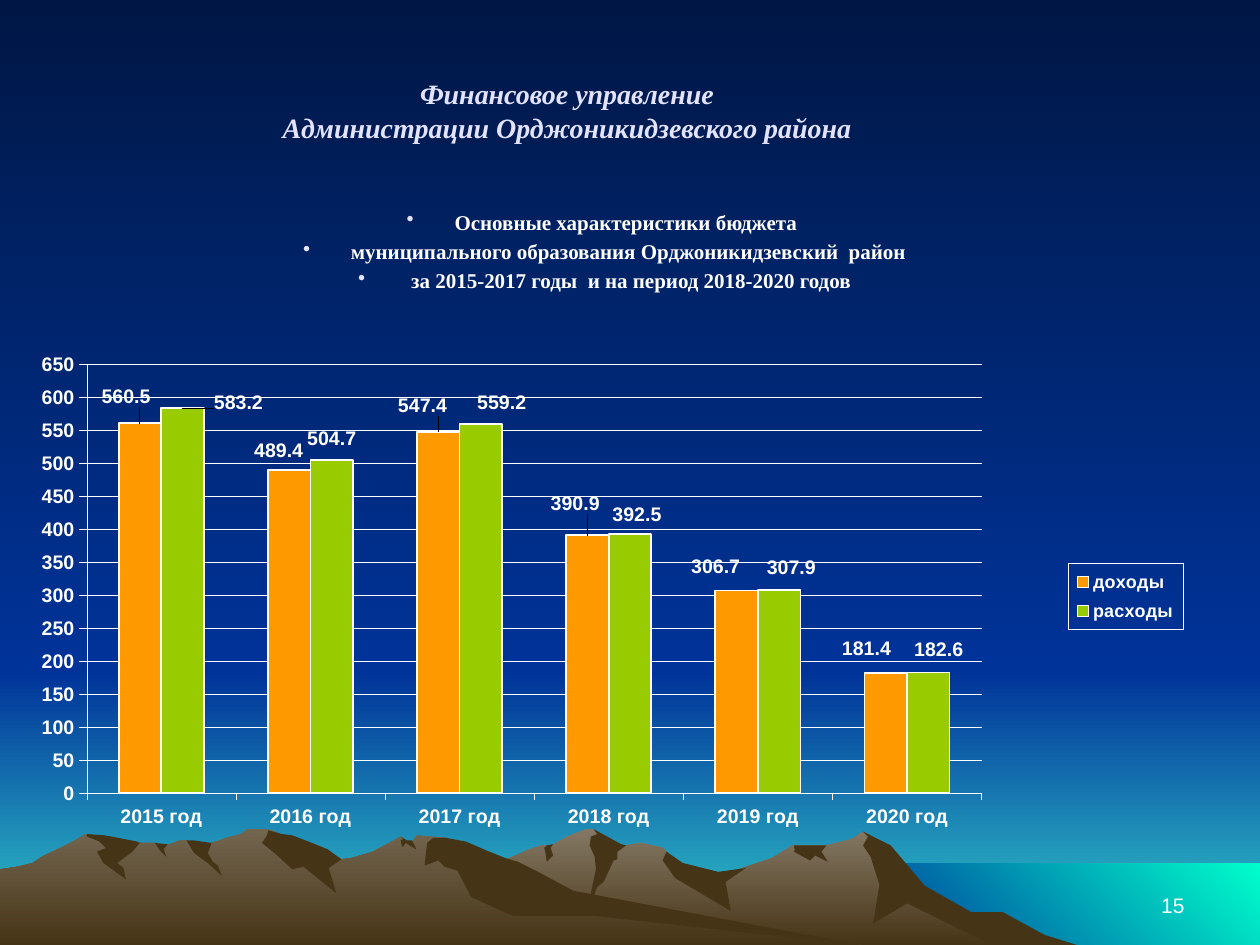
import pptx
import pptx.chart.data
import pptx.dml.color
import pptx.enum.chart
import pptx.enum.text
import pptx.oxml
import pptx.oxml.ns
import pptx.util

CELL = 9144  # the grid has 1000 columns and 750 rows, 100 cells to the inch
COLUMNS, ROWS = 1000, 750
COLORS = {
    "night": "001745", "blue": "003399", "lagoon": "33CCCC", "mint": "00FFCC",
    "mist": "847864", "haze": "73664F", "earth": "463416",
    "white": "FFFFFF", "lilac": "E3E3FF", "income": "FF9900", "expense": "99CC00",
}
DOWN, UP_RIGHT = 270, 45
ALIGN = pptx.enum.text.PP_ALIGN
ANCHOR = pptx.enum.text.MSO_ANCHOR

# Outlines of the mountains, in grid cells
RIGHT_RANGE = [
    (802, 740), (778, 727), (764, 723), (723, 698), (702, 671), (685, 660), (676, 666), (656, 671),
    (629, 671), (613, 681), (566, 697), (536, 690), (529, 676), (526, 673), (509, 669), (486, 673),
    (474, 661), (471, 658), (465, 658), (450, 664), (438, 671), (430, 671), (418, 675), (405, 681),
    (394, 685), (355, 698), (327, 709), (277, 739), (258, 751), (821, 751)]
LEFT_RANGE = [
    (690, 751), (667, 748), (432, 712), (354, 665), (331, 663), (327, 668), (323, 668), (318, 664),
    (296, 676), (279, 681), (271, 682), (260, 676), (236, 681), (223, 663), (219, 660), (212, 658),
    (196, 658), (191, 662), (183, 664), (168, 669), (160, 671), (148, 667), (143, 667), (132, 671),
    (128, 671), (123, 669), (111, 669), (94, 671), (68, 662), (56, 669), (46, 674), (35, 679),
    (26, 685), (14, 688), (0, 690), (0, 751)]
RIGHT_SHADOWS = [
    [(796, 724), (771, 724), (734, 703), (707, 671), (685, 660), (689, 664), (685, 671), (691, 680),
     (698, 702), (693, 733), (720, 717), (792, 752), (858, 751), (829, 742)],
    [(471, 658), (474, 662), (469, 664), (468, 671), (472, 680), (473, 690), (465, 727), (474, 704),
     (479, 700), (487, 683), (490, 682), (490, 676), (497, 671), (493, 670)],
    [(529, 676), (526, 683), (536, 697), (580, 723), (576, 700), (592, 689), (570, 692), (542, 685)],
    [(650, 671), (630, 671), (631, 675), (630, 676), (643, 683), (647, 679), (657, 684), (652, 676),
     (656, 671)],
    [(433, 677), (432, 673), (434, 671), (439, 670), (437, 673), (439, 679), (434, 684)],
]
LEFT_SHADOWS = [
    [(212, 663), (208, 669), (219, 678), (232, 690), (241, 688), (267, 709), (261, 689), (271, 682),
     (260, 674), (245, 668), (232, 663), (224, 662), (213, 659)],
    [(370, 668), (354, 665), (344, 665), (339, 669), (337, 687), (348, 683), (353, 688), (363, 691),
     (374, 712), (407, 727), (472, 727), (690, 751), (683, 750), (455, 707), (427, 692), (411, 684),
     (401, 681), (386, 675)],
    [(318, 667), (320, 666), (318, 664), (323, 667), (327, 667), (330, 673), (330, 674), (322, 669),
     (320, 672), (319, 672)],
    [(154, 667), (161, 668), (168, 669), (165, 677), (169, 684), (173, 687), (176, 695), (165, 685),
     (154, 677), (148, 667)],
    [(133, 670), (130, 674), (132, 680), (127, 675), (123, 669)],
    [(109, 668), (111, 669), (105, 676), (93, 685), (98, 689), (100, 698), (82, 685), (77, 676),
     (84, 673), (79, 668), (69, 664), (69, 662), (83, 663), (94, 665)],
]

# Budget figures, with the shift of each value label in points
YEARS = [f"{year} год" for year in range(2015, 2021)]
SERIES = [
    ("доходы", "income", [560.5, 489.4, 547.4, 390.9, 306.7, 181.4],
     [(-8, -6), (-6, -2), (-9, -6), (-7, -9), (-12, -5), (-11, -5)]),
    ("расходы", "expense", [583.2, 504.7, 559.2, 392.5, 307.9, 182.6],
     [(32, 6), (0, -3), (12, -3), (4, -2), (7, -4), (6, -4)]),
]


def rgb(name):
    return pptx.dml.color.RGBColor.from_string(COLORS[name])


def cells(*counts):
    return [pptx.util.Emu(round(count * CELL)) for count in counts]


def style_font(font, size, color, name="Arial", bold=False, italic=False):
    font.size, font.name = pptx.util.Pt(size), name
    font.bold, font.italic = bold, italic
    font.color.rgb = rgb(color)


def style_line(line, width):
    line.color.rgb = rgb("white")
    line.width = pptx.util.Pt(width)


def style_gradient(fill, colors, angle):
    fill.gradient()
    fill.gradient_angle = angle
    for stop, color in zip(fill.gradient_stops, colors):
        stop.color.rgb = rgb(color)


def chart_xml(tag, content):
    return pptx.oxml.parse_xml(
        f'<c:{tag} {pptx.oxml.ns.nsdecls("c", "a")}>{content}</c:{tag}>')


def set_layout(parent, index, modes="", **shares):
    for old in parent.xpath("./c:layout"):
        parent.remove(old)
    values = "".join(f'<c:{key} val="{value:.4f}"/>' for key, value in shares.items())
    parent.insert(index, chart_xml("layout", f"<c:manualLayout>{modes}{values}</c:manualLayout>"))


class SlideBuilder:
    EDGE_MODES = '<c:xMode val="edge"/><c:yMode val="edge"/>'

    def __init__(self, presentation):
        self.slide = presentation.slides.add_slide(presentation.slide_layouts[6])

    def background(self, colors):
        style_gradient(self.slide.background.fill, colors, DOWN)

    def outline(self, points, colors, angle=DOWN):
        builder = self.slide.shapes.build_freeform(*points[0], scale=CELL)
        builder.add_line_segments(points[1:], close=True)
        shape = builder.convert_to_shape()
        shape.shadow.inherit = False
        shape.line.fill.background()
        if len(colors) == 1:
            shape.fill.solid()
            shape.fill.fore_color.rgb = rgb(colors[0])
        else:
            style_gradient(shape.fill, colors, angle)

    def band(self, left, top, right, bottom, colors, angle=DOWN):
        self.outline([(right, bottom), (left, bottom), (left, top), (right, top)], colors, angle)

    def text(self, box, text, align, anchor, bullets=False, **font):
        text_frame = self.slide.shapes.add_textbox(*cells(*box)).text_frame
        text_frame.word_wrap = True
        text_frame.vertical_anchor = anchor
        text_frame.text = text
        for paragraph in text_frame.paragraphs:
            paragraph.alignment = align
            for run in paragraph.runs:
                style_font(run.font, **font)
            if bullets:
                self.bullet(paragraph)

    def bullet(self, paragraph):
        paragraph.space_before = pptx.util.Pt(2.4)
        properties = paragraph._p.get_or_add_pPr()
        indent = cells(38)[0]
        properties.set("marL", str(indent))
        properties.set("indent", str(-indent))
        namespace = pptx.oxml.ns.nsdecls("a")
        for xml in (f'<a:buClr {namespace}><a:srgbClr val="{COLORS["lilac"]}"/></a:buClr>',
                    f'<a:buChar {namespace} char="•"/>'):
            properties.append(pptx.oxml.parse_xml(xml))

    def column_chart(self, box, categories, series_rows):
        data = pptx.chart.data.CategoryChartData()
        data.categories = categories
        for name, _, values, _ in series_rows:
            data.add_series(name, values)
        kind = pptx.enum.chart.XL_CHART_TYPE.COLUMN_CLUSTERED
        chart = self.slide.shapes.add_chart(kind, *cells(*box), data).chart
        chart.has_title = False
        style_font(chart.font, 11.2, "white", bold=True)
        plot = chart.plots[0]
        plot.gap_width, plot.overlap, plot.vary_by_categories = 150, 0, False

        # Columns and their value labels
        width, height = (length * 0.72 for length in box[2:])
        for series, (_, color, _, shifts) in zip(plot.series, series_rows):
            series.format.fill.solid()
            series.format.fill.fore_color.rgb = rgb(color)
            style_line(series.format.line, 1)
            labels = series.data_labels
            labels.show_value = True
            style_font(labels.font, 11.2, "white", bold=True)
            for index in range(len(shifts)):
                label = series.points[index].data_label
                label.position = pptx.enum.chart.XL_LABEL_POSITION.OUTSIDE_END
                style_font(label.font, 11.2, "white", bold=True)
            for element, (right, down) in zip(series._element.xpath(".//c:dLbl"), shifts):
                set_layout(element, 1, x=right / width, y=down / height)

        # Axes
        for axis in (chart.category_axis, chart.value_axis):
            axis.major_tick_mark = pptx.enum.chart.XL_TICK_MARK.OUTSIDE
            style_line(axis.format.line, 0.25)
            style_font(axis.tick_labels.font, 11.2, "white", bold=True)
        axis = chart.value_axis
        axis.minimum_scale, axis.maximum_scale, axis.major_unit = 0, 650, 50
        style_line(axis.major_gridlines.format.line, 0.25)

        # Legend with a thin frame
        chart.has_legend = True
        legend = chart.legend
        legend.position = pptx.enum.chart.XL_LEGEND_POSITION.RIGHT
        legend.include_in_layout = False
        style_font(legend.font, 10.3, "white", bold=True)
        frame = chart_xml("spPr", '<a:noFill/><a:ln w="3175"><a:solidFill><a:srgbClr val="'
                          f'{COLORS["white"]}"/></a:solidFill></a:ln>')
        legend._element.xpath("./c:txPr")[0].addprevious(frame)
        set_layout(legend._element, 1, self.EDGE_MODES, x=0.89, y=0.48, w=0.1, h=0.09)

        # Transparent chart and plot areas
        clear = "<a:noFill/><a:ln><a:noFill/></a:ln>"
        area = chart.element.xpath(".//c:plotArea")[0]
        set_layout(area, 0, '<c:layoutTarget val="inner"/>' + self.EDGE_MODES,
                   x=0.037, y=0.208, w=0.778, h=0.585)
        area.append(chart_xml("spPr", clear))
        chart.element.xpath("./c:chart")[0].addnext(chart_xml("spPr", clear))


def main():
    presentation = pptx.Presentation()
    presentation.slide_width, presentation.slide_height = cells(COLUMNS, ROWS)
    builder = SlideBuilder(presentation)

    # Sky, water and mountains
    builder.background(["night", "blue"])
    builder.band(0, 533, COLUMNS, ROWS, ["blue", "lagoon"])
    builder.band(0, 0, COLUMNS, 533, ["night", "blue"])
    builder.band(683, 685, COLUMNS, 752, ["blue", "mint"], UP_RIGHT)
    for ridge, top_color, shadows in ((RIGHT_RANGE, "mist", RIGHT_SHADOWS),
                                      (LEFT_RANGE, "haze", LEFT_SHADOWS)):
        builder.outline(ridge, [top_color, "earth"])
        for shadow in shadows:
            builder.outline(shadow, ["earth"])

    # Page number, chart and headings
    builder.text((717, 683, 233, 50), "15", ALIGN.RIGHT, ANCHOR.BOTTOM, size=12, color="white")
    builder.column_chart((33, 168, 915, 582), YEARS, SERIES)
    builder.text((0, 25, 900, 125), "Финансовое управление\vАдминистрации Орджоникидзевского района",
                 ALIGN.CENTER, ANCHOR.MIDDLE, size=16, color="lilac",
                 name="Times New Roman", bold=True, italic=True)
    builder.text((28, 161, 904, 75),
                 "Основные характеристики бюджета \n"
                 "муниципального образования Орджоникидзевский  район\n"
                 " за 2015-2017 годы  и на период 2018-2020 годов",
                 ALIGN.CENTER, ANCHOR.TOP, bullets=True, size=12, color="white",
                 name="Times New Roman", bold=True)
    presentation.save("out.pptx")


if __name__ == "__main__":
    main()
